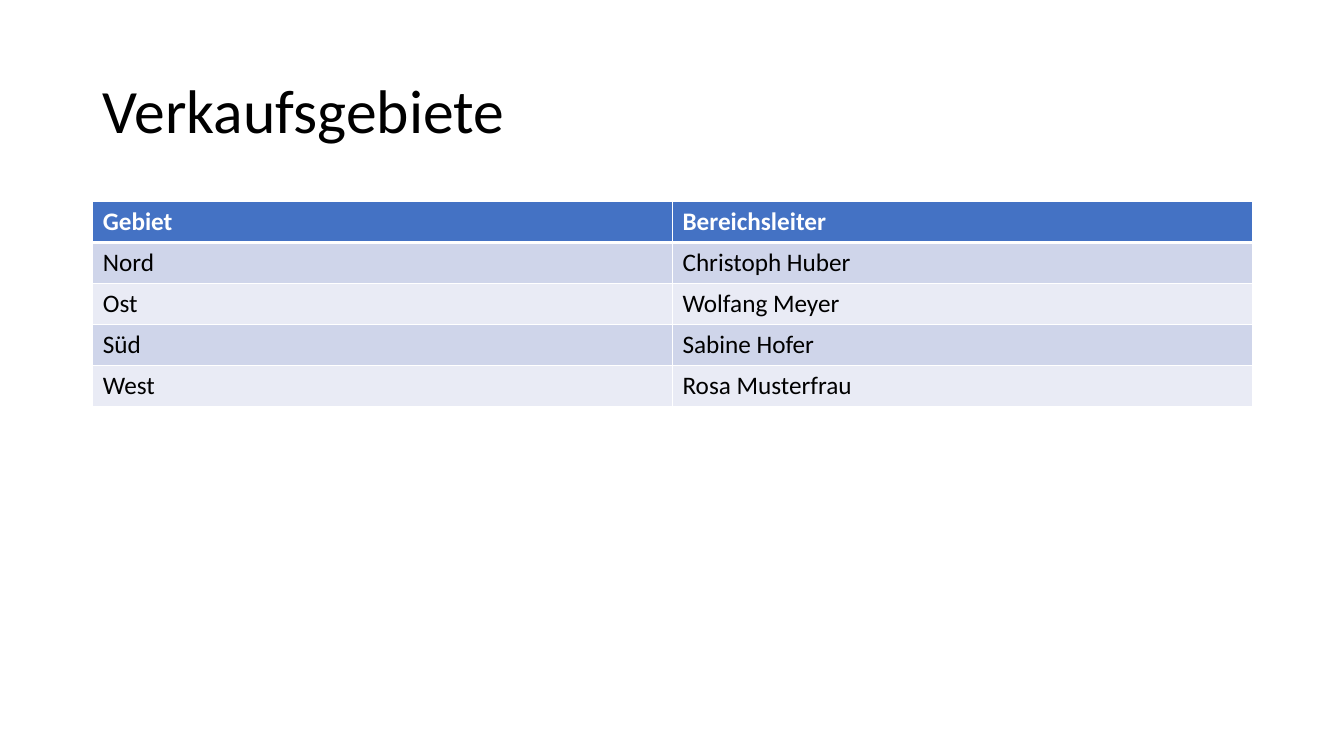
from dataclasses import dataclass

from lxml.etree import SubElement
from pptx import Presentation
from pptx.dml.color import RGBColor
from pptx.enum.text import MSO_ANCHOR
from pptx.oxml.ns import qn
from pptx.util import Inches, Pt


@dataclass(frozen=True)
class Theme:
    font: str = "Calibri"
    title_size: int = 44
    table_size: int = 18
    text: str = "000000"
    header_text: str = "FFFFFF"
    header_fill: str = "4472C4"
    bands: tuple = ("CFD5EA", "E9EBF5")
    border: str = "FFFFFF"
    border_width: int = 1
    header_border_width: int = 3


THEME = Theme()

REGIONS = [
    ("Gebiet", "Bereichsleiter"),
    ("Nord", "Christoph Huber"),
    ("Ost", "Wolfang Meyer"),
    ("Süd", "Sabine Hofer"),
    ("West", "Rosa Musterfrau"),
]


def add_run(p, text, size, color, bold=False):
    r = p.add_run()
    r.text = text
    r.font.name = THEME.font
    r.font.size = Pt(size)
    r.font.bold = bold
    r.font.color.rgb = RGBColor.from_string(color)


def set_borders(cell, widths):
    # Border lines must precede the fill in the cell properties
    tc_pr = cell._tc.get_or_add_tcPr()
    for i, (side, width) in enumerate(widths.items()):
        ln = SubElement(tc_pr, qn(f"a:ln{side}"), w=str(Pt(width)))
        fill = SubElement(ln, qn("a:solidFill"))
        SubElement(fill, qn("a:srgbClr"), val=THEME.border)
        tc_pr.insert(i, ln)


def add_title(s, text, left, top, width, height):
    sp = s.shapes.add_textbox(Inches(left), Inches(top), Inches(width), Inches(height))
    tf = sp.text_frame
    tf.word_wrap = True
    tf.vertical_anchor = MSO_ANCHOR.MIDDLE
    p = tf.paragraphs[0]
    p.line_spacing = 0.9
    add_run(p, text, THEME.title_size, THEME.text)


def add_region_table(s, rows, left, top, width, height):
    table = s.shapes.add_table(
        len(rows), len(rows[0]),
        Inches(left), Inches(top), Inches(width), Inches(height),
    ).table
    thin, thick = THEME.border_width, THEME.header_border_width
    for i, row in enumerate(rows):
        # The header row stands apart; the body rows alternate
        header = i == 0
        fill = THEME.header_fill if header else THEME.bands[(i - 1) % 2]
        color = THEME.header_text if header else THEME.text
        widths = {"L": thin, "R": thin,
                  "T": thick if i == 1 else thin,
                  "B": thick if header else thin}
        for j, text in enumerate(row):
            cell = table.cell(i, j)
            cell.fill.solid()
            cell.fill.fore_color.rgb = RGBColor.from_string(fill)
            set_borders(cell, widths)
            add_run(cell.text_frame.paragraphs[0], text, THEME.table_size, color, header)


def main():
    prs = Presentation()
    prs.slide_width, prs.slide_height = Inches(13.33), Inches(7.5)
    s = prs.slides.add_slide(prs.slide_layouts[6])
    add_title(s, "Verkaufsgebiete", 0.92, 0.4, 11.5, 1.45)
    add_region_table(s, REGIONS, 0.92, 2, 11.5, 2.03)
    prs.save("out.pptx")


if __name__ == "__main__":
    main()
